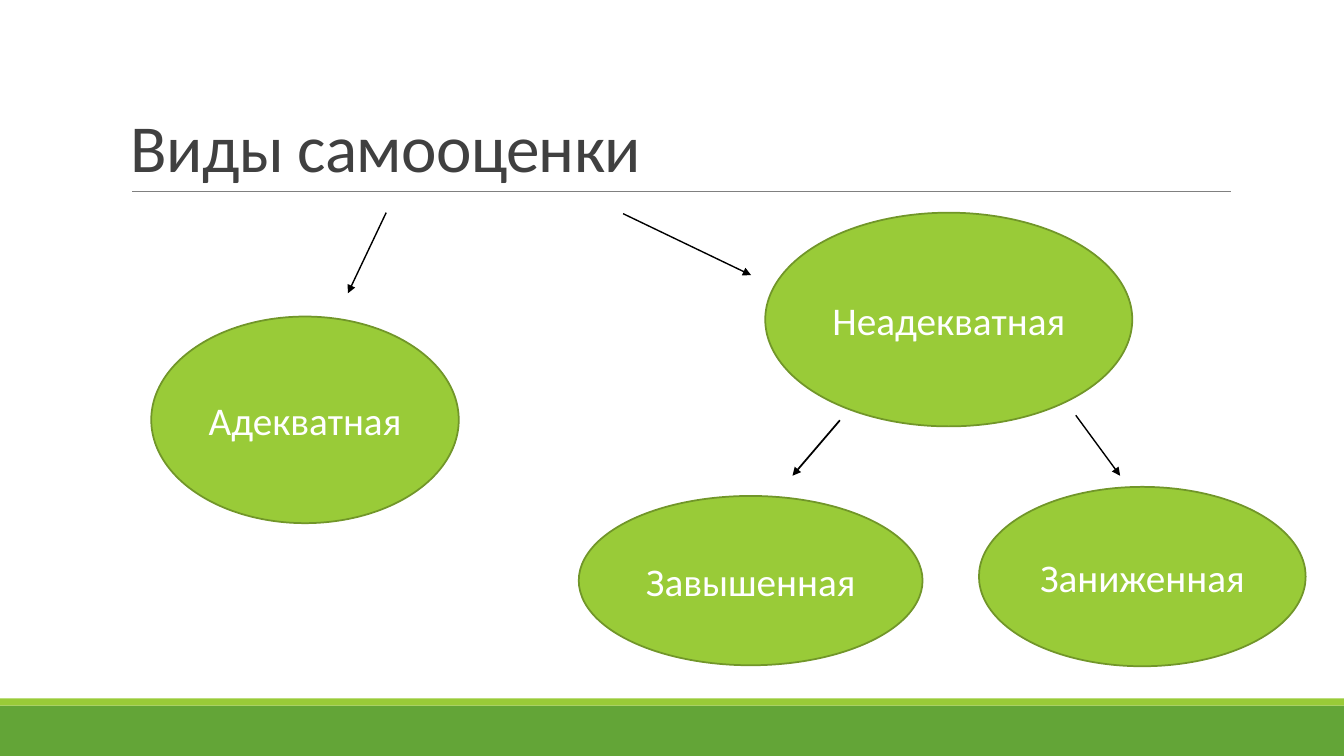
from pptx import Presentation
from pptx import util as u
from pptx.dml.color import RGBColor
from pptx.enum import shapes, text
from pptx.oxml.ns import qn
from lxml import etree


def paint(part, tone):
    if hasattr(part, "solid"):
        part.solid()
        part = part.fore_color
    part.rgb = RGBColor.from_string(tone)


def write(frame, words, size, tone, anchor, align):
    form = {"word_wrap": True, "vertical_anchor": anchor}
    for key, val in form.items():
        setattr(frame, key, val)
    para = frame.paragraphs[0]
    para.alignment = align
    run = para.add_run()
    run.text = words
    for key, val in {"name": "Calibri", "size": u.Pt(size)}.items():
        setattr(run.font, key, val)
    paint(run.font.color, tone)
    return para, run


deck = Presentation()
deck.slide_width, deck.slide_height = u.Inches(13.33), u.Inches(7.5)
slide = deck.slides.add_slide(deck.slide_layouts[6])
items = slide.shapes

for top, high, tone in [(7, 0.5, "63A537"), (6.93, 0.07, "99CB38")]:
    band = items.add_shape(shapes.MSO_SHAPE.RECTANGLE, 0, u.Inches(top),
                           deck.slide_width, u.Inches(high))
    band.shadow.inherit = False
    paint(band.fill, tone)
    band.line.fill.background()

title = items.add_textbox(*map(u.Inches, (1.2, 0.31, 11, 1.59)))
para, run = write(title.text_frame, "Виды самооценки", 48, "404040",
                  text.MSO_ANCHOR.BOTTOM, text.PP_ALIGN.LEFT)
para.line_spacing = 0.85
run.font._element.set("spc", "-50")

kinds = [
    ("Адекватная", 1.5, 3.14, 3.05, 2.05),
    ("Неадекватная", 7.59, 2.11, 3.64, 2.12),
    ("Завышенная", 5.74, 4.92, 3.41, 1.68),
    ("Заниженная", 9.71, 4.83, 3.24, 1.78),
]
for name, *box in kinds:
    oval = items.add_shape(shapes.MSO_SHAPE.OVAL, *map(u.Inches, box))
    oval.shadow.inherit = False
    paint(oval.fill, "99CB38")
    paint(oval.line.fill, "719629")
    oval.line.width = u.Pt(1.25)
    write(oval.text_frame, name, 28, "FFFFFF",
          text.MSO_ANCHOR.MIDDLE, text.PP_ALIGN.CENTER)

lines = [
    ((1.31, 1.9, 12.21, 1.9), "808080", 0.5, False),
    ((8.33, 4.17, 7.86, 4.72), "000000", 1.25, True),
    ((10.67, 4.12, 11.11, 4.72), "000000", 1, True),
    ((3.83, 2.11, 3.45, 2.91), "000000", 1, True),
    ((6.18, 2.12, 7.45, 2.73), "000000", 1, True),
]
for ends, tone, width, arrow in lines:
    link = items.add_connector(shapes.MSO_CONNECTOR.STRAIGHT, *map(u.Inches, ends))
    paint(link.line.fill, tone)
    link.line.width = u.Pt(width)
    if arrow:
        etree.SubElement(link.line._get_or_add_ln(), qn("a:tailEnd"), type="triangle")
    etree.SubElement(link._element.spPr, qn("a:effectLst"))

deck.save("out.pptx")
